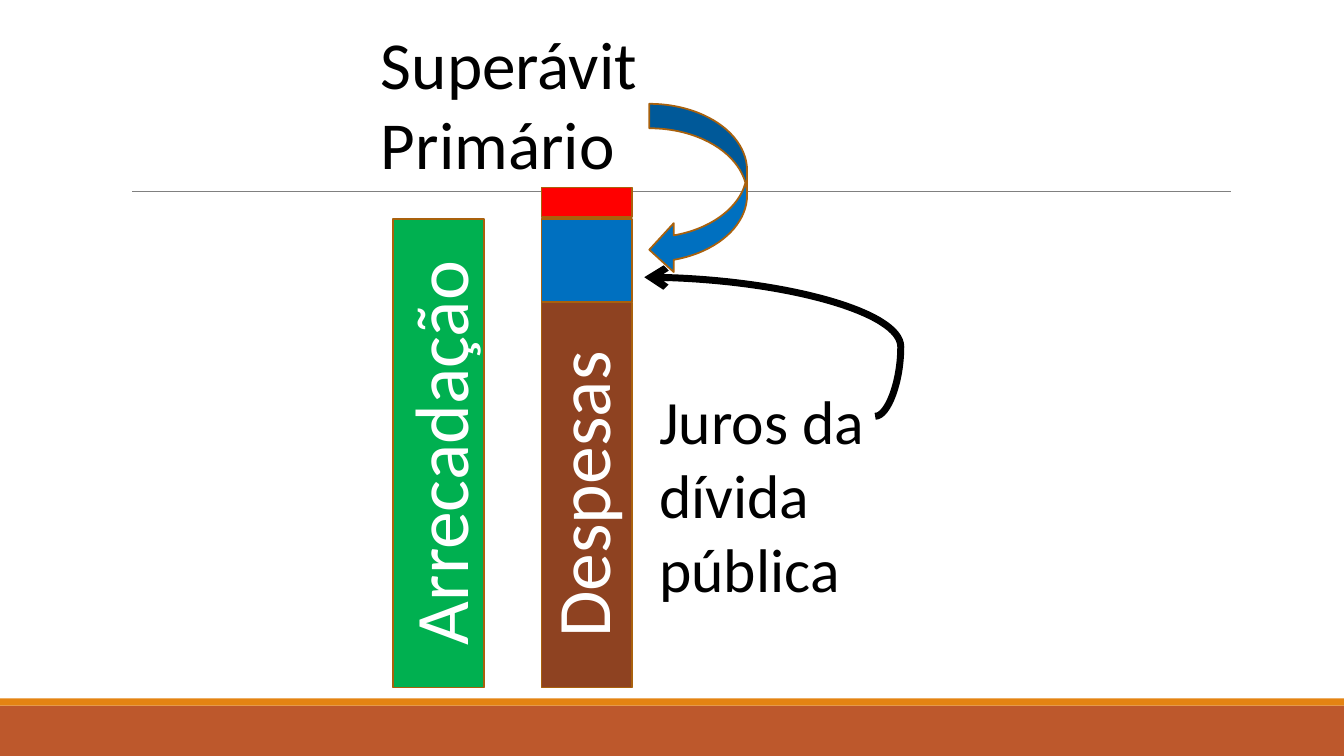
from lxml import etree
from pptx import Presentation
from pptx.dml.color import RGBColor
from pptx.enum.shapes import MSO_CONNECTOR, MSO_SHAPE
from pptx.enum.text import MSO_AUTO_SIZE, PP_ALIGN
from pptx.oxml.ns import qn
from pptx.util import Inches, Pt

RECTANGLE = MSO_SHAPE.RECTANGLE
CURVED_ARROW = MSO_SHAPE.CURVED_LEFT_ARROW
STRAIGHT, CURVE = MSO_CONNECTOR.STRAIGHT, MSO_CONNECTOR.CURVE
GROW = MSO_AUTO_SIZE.SHAPE_TO_FIT_TEXT
LEFT, CENTER = PP_ALIGN.LEFT, PP_ALIGN.CENTER

BLACK = RGBColor(0x00, 0x00, 0x00)
WHITE = RGBColor(0xFF, 0xFF, 0xFF)
GRAY = RGBColor(0x80, 0x80, 0x80)
RUST = RGBColor(0xBD, 0x58, 0x2C)
ORANGE = RGBColor(0xE4, 0x83, 0x12)
OUTLINE = RGBColor(0xA9, 0x61, 0x0D)
GREEN = RGBColor(0x00, 0xB0, 0x50)
BROWN = RGBColor(0x8E, 0x42, 0x21)
BLUE = RGBColor(0x00, 0x70, 0xC0)
RED = RGBColor(0xFF, 0x00, 0x00)

FONT = "Calibri"
BAR_WIDTH = 0.9
REVENUE_LEFT, EXPENSE_LEFT = 3.9, 5.37
BAR_TOP, INTEREST_BOTTOM, BAR_BOTTOM = 2.17, 3, 6.82


def add_block(page, kind, left, top, width, height, fill, outline=None):
    """Add a filled shape, outlined only when a colour is given."""
    block = page.shapes.add_shape(
        kind, Inches(left), Inches(top), Inches(width), Inches(height))
    block.shadow.inherit = False
    block.fill.solid()
    block.fill.fore_color.rgb = fill
    if outline is None:
        block.line.fill.background()
    else:
        block.line.color.rgb = outline
        block.line.width = Pt(1.25)
    return block


def add_bar(page, left, top, bottom, fill):
    """Add one segment of a column."""
    return add_block(page, RECTANGLE, left, top, BAR_WIDTH, bottom - top,
                     fill, OUTLINE)


def add_text(page, lines, left, top, width, height, size, color,
             align=LEFT, wrap=True, rotation=0):
    """Add a text box with one paragraph per line."""
    box = page.shapes.add_textbox(
        Inches(left), Inches(top), Inches(width), Inches(height))
    box.rotation = rotation
    frame = box.text_frame
    frame.word_wrap = wrap
    frame.auto_size = GROW
    frame.text = "\n".join(lines)
    for para in frame.paragraphs:
        para.alignment = align
        para.font.name = FONT
        para.font.size = Pt(size)
        para.font.color.rgb = color
    return box


def add_bar_label(page, text, left, top, width):
    """Add a white label that reads upwards along a column."""
    return add_text(page, [text], left, top, width, 1.01, 54, WHITE,
                    CENTER, False, 270)


def add_line(page, kind, start, end, color, width):
    """Add a connector without a shadow."""
    line = page.shapes.add_connector(
        kind, *(Inches(value) for value in (*start, *end)))
    line.line.color.rgb = color
    line.line.width = Pt(width)
    etree.SubElement(line.element.spPr, qn("a:effectLst"))
    return line


def add_curved_pointer(page, start, end, bend):
    """Add a half-turned curved connector with an open arrowhead."""
    pointer = add_line(page, CURVE, start, end, BLACK, 5)
    properties = pointer.element.spPr
    properties.find(qn("a:xfrm")).set("rot", "10800000")
    guides = properties.find(qn("a:prstGeom")).find(qn("a:avLst"))
    etree.SubElement(guides, qn("a:gd"), name="adj1", fmla=f"val {bend}")
    etree.SubElement(properties.find(qn("a:ln")), qn("a:tailEnd"),
                     type="arrow")
    return pointer


def main():
    """Build the slide on the primary surplus."""
    deck = Presentation()
    deck.slide_width, deck.slide_height = Inches(13.33), Inches(7.5)
    page = deck.slides.add_slide(deck.slide_layouts[6])

    add_block(page, RECTANGLE, 0, 7, 13.33, 0.5, RUST)
    add_block(page, RECTANGLE, 0, 6.93, 13.33, 0.07, ORANGE)
    add_line(page, STRAIGHT, (1.31, 1.9), (12.21, 1.9), GRAY, 0.5)

    add_bar(page, REVENUE_LEFT, BAR_TOP, BAR_BOTTOM, GREEN)
    add_bar_label(page, "Arrecadação", 2.33, 3.99, 4.05)
    add_bar(page, EXPENSE_LEFT, INTEREST_BOTTOM, BAR_BOTTOM, BROWN)
    add_bar_label(page, "Despesas", 4.23, 4.4, 3.07)
    add_bar(page, EXPENSE_LEFT, BAR_TOP, INTEREST_BOTTOM, BLUE)

    add_text(page, ["Superávit", "Primário"], 3.68, 0.17, 3.15, 1.72,
             48, BLACK)
    add_bar(page, EXPENSE_LEFT, 1.86, 2.15, RED)
    add_text(page, ["Juros da dívida pública"], 6.44, 3.75, 2.96, 2.32,
             44, BLACK)
    add_curved_pointer(page, (6.39, 2.75), (8.68, 4.13), -11100)
    add_block(page, CURVED_ARROW, 6.44, 1.03, 0.97, 1.69, BLUE, OUTLINE)

    deck.save("out.pptx")


if __name__ == "__main__":
    main()
